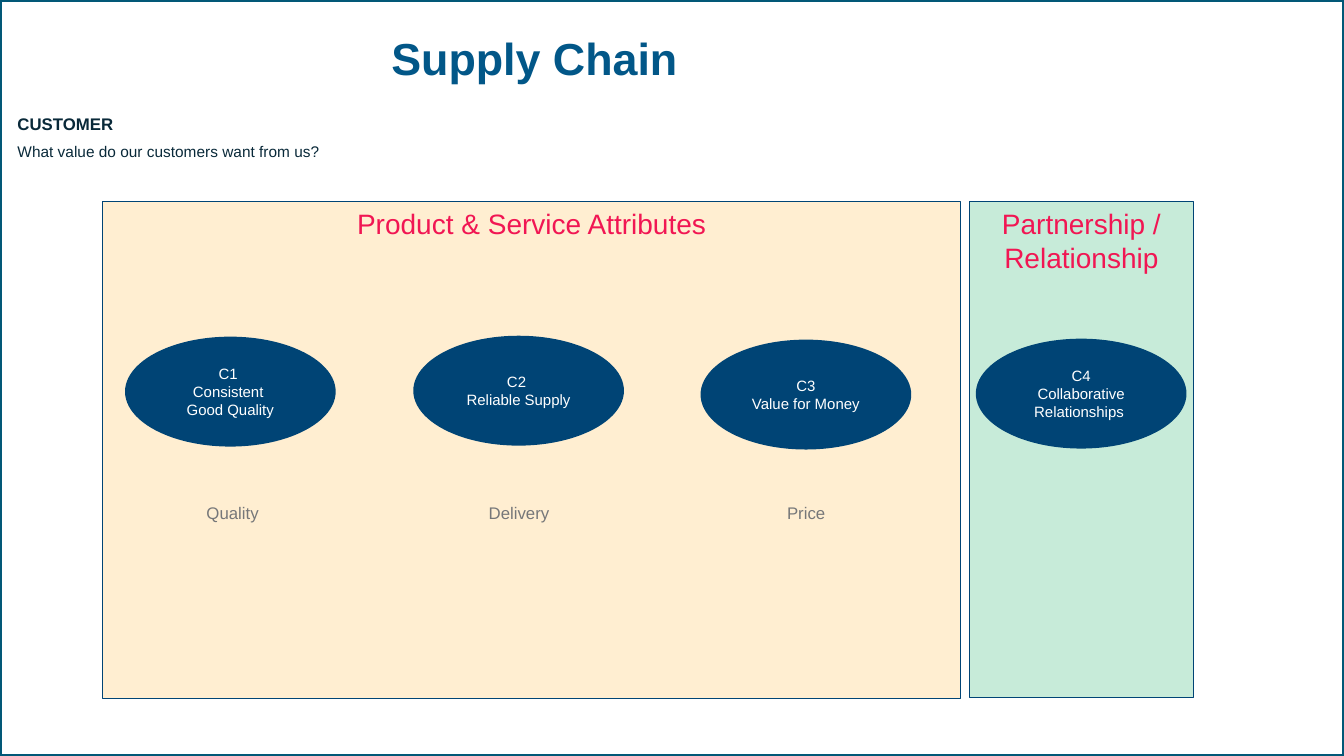
import lxml.etree
import pptx
import pptx.dml.color
import pptx.enum.shapes
import pptx.enum.text
import pptx.oxml.ns
import pptx.util

Pt = pptx.util.Pt
RGBColor = pptx.dml.color.RGBColor
Shape = pptx.enum.shapes.MSO_SHAPE
Align = pptx.enum.text.PP_ALIGN
Anchor = pptx.enum.text.MSO_ANCHOR
AutoSize = pptx.enum.text.MSO_AUTO_SIZE

FRAME = RGBColor(0x02, 0x58, 0x77)
TITLE = RGBColor(0x02, 0x57, 0x88)
NAVY = RGBColor(0x00, 0x44, 0x75)
GREEN = RGBColor(0xC7, 0xEB, 0xD9)
ORANGE = RGBColor(0xFF, 0xAA, 0x1B)
PINK = RGBColor(0xF1, 0x16, 0x53)
GREY = RGBColor(0x76, 0x77, 0x79)
INK = RGBColor(0x09, 0x29, 0x39)
WHITE = RGBColor(0xFF, 0xFF, 0xFF)


class StrategySlide:
    """Draws the elements of a strategy map on one slide."""

    font_name = "Arial"

    def __init__(self, slide):
        self.slide = slide

    def set_text(self, paragraph, text, size, color, bold=False, align=Align.LEFT):
        paragraph.text = text
        paragraph.alignment = align
        paragraph.font.name = self.font_name
        paragraph.font.size = Pt(size)
        paragraph.font.bold = bold
        paragraph.font.color.rgb = color

    def shape(self, kind, box, fill=None, line=None, line_width=0.75):
        shape = self.slide.shapes.add_shape(kind, *map(Pt, box))
        shape.shadow.inherit = False
        if fill is None:
            shape.fill.background()
        else:
            shape.fill.solid()
            shape.fill.fore_color.rgb = fill
        if line is None:
            shape.line.fill.background()
        else:
            shape.line.color.rgb = line
            shape.line.width = Pt(line_width)
        return shape

    def panel(self, box, heading, fill, opacity=100):
        shape = self.shape(Shape.RECTANGLE, box, fill, NAVY)
        if opacity < 100:
            color = shape.element.spPr.find(".//" + pptx.oxml.ns.qn("a:srgbClr"))
            alpha = lxml.etree.SubElement(color, pptx.oxml.ns.qn("a:alpha"))
            alpha.set("val", str(opacity * 1000))
        frame = shape.text_frame
        frame.word_wrap = True
        frame.vertical_anchor = Anchor.TOP
        self.set_text(frame.paragraphs[0], heading, 20, PINK, align=Align.CENTER)

    def objective(self, left, top, lines):
        shape = self.shape(Shape.OVAL, (left, top, 150.5, 78.5), NAVY)
        frame = shape.text_frame
        frame.word_wrap = True
        frame.vertical_anchor = Anchor.MIDDLE
        frame.margin_left = frame.margin_right = 0
        frame.text = "\n".join(lines)
        for paragraph, line in zip(frame.paragraphs, lines):
            self.set_text(paragraph, line, 10.7, WHITE, align=Align.CENTER)

    def text_box(self, box, wrap=True, auto_size=AutoSize.SHAPE_TO_FIT_TEXT):
        frame = self.slide.shapes.add_textbox(*map(Pt, box)).text_frame
        frame.word_wrap = wrap
        frame.auto_size = auto_size
        return frame

    def title(self, box, text):
        frame = self.text_box(box, auto_size=AutoSize.NONE)
        frame.vertical_anchor = Anchor.MIDDLE
        paragraph = frame.paragraphs[0]
        self.set_text(paragraph, text, 32, TITLE, True, Align.CENTER)
        paragraph.line_spacing = 0.9

    def label(self, left, width, text):
        frame = self.text_box((left, 355.7, width, 21.6), wrap=False)
        self.set_text(frame.paragraphs[0], text, 12, GREY)

    def perspective(self, box, name, question):
        frame = self.text_box(box)
        self.set_text(frame.paragraphs[0], name, 12, INK, bold=True)
        paragraph = frame.add_paragraph()
        self.set_text(paragraph, question, 11, INK)
        paragraph.space_before = Pt(6)


def main():
    presentation = pptx.Presentation()
    presentation.slide_width = Pt(960)
    presentation.slide_height = Pt(540)
    page = StrategySlide(presentation.slides.add_slide(presentation.slide_layouts[6]))

    page.shape(Shape.RECTANGLE, (0, 0, 960, 540), line=FRAME, line_width=3)
    page.panel((692.6, 144, 159.8, 354.2), "Partnership / Relationship", GREEN)
    page.panel((73.4, 144, 612.7, 355), "Product & Service Attributes", ORANGE, 20)
    page.title((26.6, 20.2, 710.6, 46), "Supply Chain")

    objectives = [
        (89.3, 240.5, ["C1 \vConsistent ", "Good Quality"]),
        (295.2, 239.8, ["C2 \vReliable Supply"]),
        (500.4, 242.6, ["C3", "Value for Money"]),
        (697, 241.9, ["C4", "Collaborative Relationships "]),
    ]
    for left, top, lines in objectives:
        page.objective(left, top, lines)

    attributes = [(140.4, 51.8, "Quality"), (342, 58.3, "Delivery"), (555.1, 41.8, "Price")]
    for left, width, text in attributes:
        page.label(left, width, text)

    page.perspective((5.4, 77.8, 427.7, 41.8), "CUSTOMER", "What value do our customers want from us?")
    presentation.save("out.pptx")


if __name__ == "__main__":
    main()
